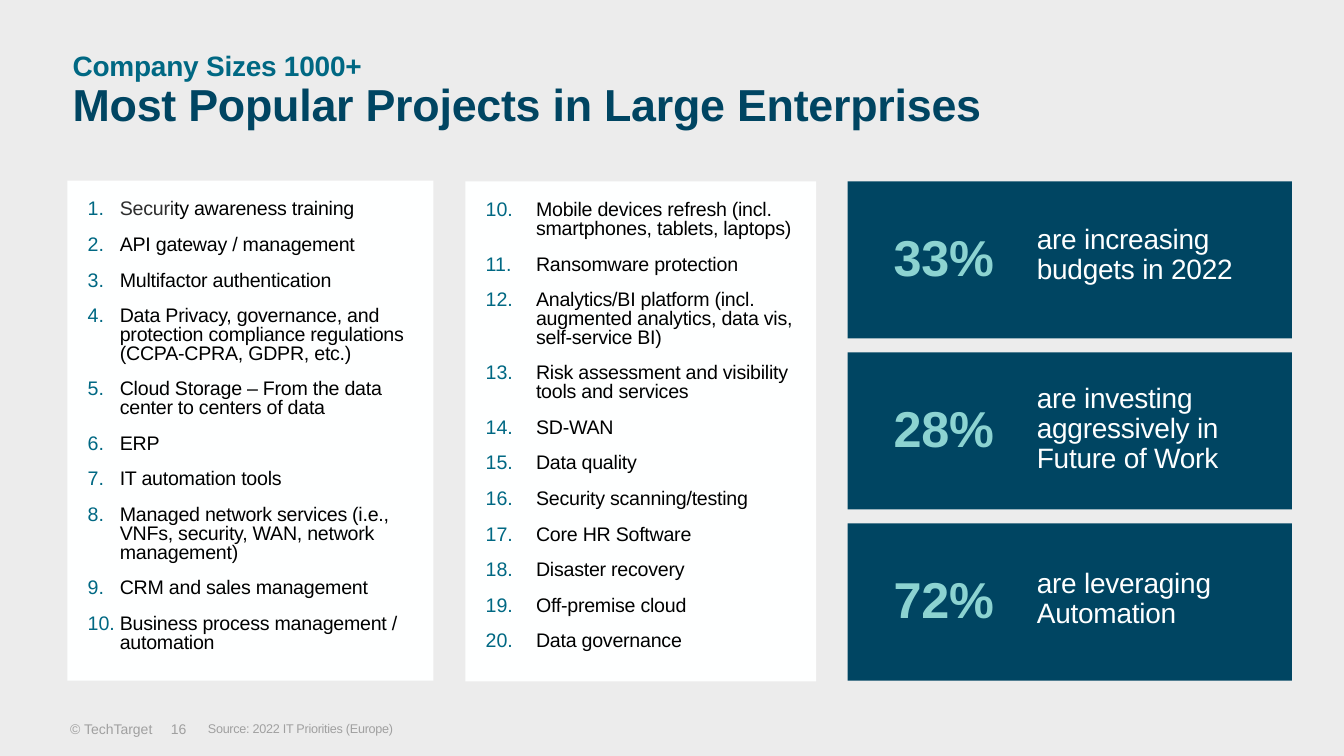
from dataclasses import dataclass

from lxml import etree
from pptx import Presentation
from pptx.dml.color import RGBColor
from pptx.enum import shapes, text
from pptx.oxml.ns import qn
from pptx.util import Cm, Pt

HUES = {
    "page": "ECECEC", "white": "FEFFFF", "navy": "004562", "teal": "006883",
    "mint": "8CD3D1", "grey": "A0A0A0", "black": "000000", "dark": "2E2E2E",
}
LEFT, MID, RIGHT = text.PP_ALIGN.LEFT, text.PP_ALIGN.CENTER, text.PP_ALIGN.RIGHT


@dataclass
class Box:
    left: float
    top: float
    width: float
    height: float


@dataclass
class Style:
    size: float
    hue: str
    bold: bool = False
    track: int = -20
    align: int = LEFT
    lines: float = 0.9
    after: float = 0


@dataclass
class Panel:
    box: Box
    start: int
    hang: float
    items: list[str]


@dataclass
class Stat:
    share: str
    label: str
    top: float
    height: float


PANELS = [
    Panel(Box(1.7, 4.55, 9.22, 12.6), 1, 0.81, [
        "Security awareness training",
        "API gateway / management",
        "Multifactor authentication",
        "Data Privacy, governance, and protection compliance regulations (CCPA-CPRA, GDPR, etc.)",
        "Cloud Storage – From the data center to centers of data",
        "ERP",
        "IT automation tools",
        "Managed network services (i.e., VNFs, security, WAN, network management)",
        "CRM and sales management",
        "Business process management / automation",
    ]),
    Panel(Box(11.73, 4.57, 8.84, 12.6), 10, 1.27, [
        "Mobile devices refresh (incl. smartphones, tablets, laptops)",
        "Ransomware protection",
        "Analytics/BI platform (incl. augmented analytics, data vis, self-service BI)",
        "Risk assessment and visibility tools and services",
        "SD-WAN",
        "Data quality",
        "Security scanning/testing",
        "Core HR Software",
        "Disaster recovery",
        "Off-premise cloud",
        "Data governance",
    ]),
]
STATS = [
    Stat("33%", "are increasing budgets in 2022", 5.54, 1.8),
    Stat("28%", "are investing aggressively in Future of Work", 9.55, 2.57),
    Stat("72%", "are leveraging Automation", 14.22, 1.8),
]
CARD = Box(21.36, 4.57, 11.2, 3.96)
PITCH = 4.31


def color(name: str) -> RGBColor:
    return RGBColor.from_string(HUES[name])


def place(shape, box: Box) -> None:
    shape.left, shape.top = Cm(box.left), Cm(box.top)
    shape.width, shape.height = Cm(box.width), Cm(box.height)


def paint(shape, hue: str) -> None:
    shape.fill.solid()
    shape.fill.fore_color.rgb = color(hue)
    shape.line.fill.background()


def frame(shape, side: float, edge: float, anchor=text.MSO_ANCHOR.TOP) -> None:
    area = shape.text_frame
    area.word_wrap = True
    area.auto_size = text.MSO_AUTO_SIZE.NONE
    area.vertical_anchor = anchor
    area.margin_left = area.margin_right = Cm(side)
    area.margin_top = area.margin_bottom = Cm(edge)


def format(para, style: Style) -> None:
    para.alignment = style.align
    para.line_spacing = style.lines
    para.space_before, para.space_after = Pt(0), Pt(style.after)
    for run in para.runs:
        run.font.name = "Arial"
        run.font.size = Pt(style.size)
        run.font.bold = style.bold
        run.font.color.rgb = color(style.hue)
        run.font._element.set("spc", str(style.track))


def label(slide, box: Box, words: str, style: Style, side: float = 0.25,
          anchor=text.MSO_ANCHOR.TOP) -> None:
    shape = slide.shapes.add_textbox(0, 0, 0, 0)
    place(shape, box)
    frame(shape, side, 0.13, anchor)
    para = shape.text_frame.paragraphs[0]
    para.text = words
    format(para, style)


def number(para, start: int, hang: float) -> None:
    props = para._p.get_or_add_pPr()
    props.set("marL", str(Cm(hang)))
    props.set("indent", str(-Cm(hang)))
    tint = etree.SubElement(props, qn("a:buClr"))
    etree.SubElement(tint, qn("a:srgbClr"), val=HUES["teal"])
    etree.SubElement(props, qn("a:buFont"), typeface="Arial")
    etree.SubElement(props, qn("a:buAutoNum"), type="arabicPeriod", startAt=str(start))


def fill_list(shape, panel: Panel) -> None:
    place(shape, panel.box)
    paint(shape, "white")
    frame(shape, 0.51, 0.51)
    shape.text_frame.text = "\n".join(panel.items)
    for para in shape.text_frame.paragraphs:
        number(para, panel.start, panel.hang)
        format(para, Style(14, "black", lines=0.8, after=12))


def main() -> None:
    deck = Presentation()
    deck.slide_width, deck.slide_height = Cm(33.87), Cm(19.05)
    slide = deck.slides.add_slide(deck.slide_layouts[3])
    back = slide.background.fill
    back.solid()
    back.fore_color.rgb = color("page")

    # Title
    title = slide.shapes.title
    place(title, Box(1.7, 1.35, 30.48, 1.93))
    frame(title, 0.13, 0.13, text.MSO_ANCHOR.MIDDLE)
    title.text_frame.text = "Company Sizes 1000+\nMost Popular Projects in Large Enterprises"
    heads = [Style(20, "teal", bold=True), Style(32, "navy", bold=True)]
    for para, style in zip(title.text_frame.paragraphs, heads):
        format(para, style)

    # Numbered lists
    for slot, panel in enumerate(PANELS, start=1):
        fill_list(slide.placeholders[slot], panel)

    # The first letters of the first item are lighter
    first = slide.placeholders[1].text_frame.paragraphs[0]
    first.text = "Securi"
    first.add_run().text = "ty awareness training"
    format(first, Style(14, "black", lines=0.8, after=12))
    first.runs[0].font.color.rgb = color("dark")

    # Figures on cards
    for row, stat in enumerate(STATS):
        top = CARD.top + row * PITCH
        card = slide.shapes.add_shape(shapes.MSO_SHAPE.RECTANGLE, 0, 0, 0, 0)
        place(card, Box(CARD.left, top, CARD.width, CARD.height))
        paint(card, "navy")
        card.shadow.inherit = False
        label(slide, Box(21.97, top + 1.15, 3.63, 1.68), stat.share,
              Style(36, "mint", bold=True, align=MID), anchor=text.MSO_ANCHOR.MIDDLE)
        label(slide, Box(25.88, stat.top, 5.77, stat.height), stat.label, Style(20, "white"))

    # Footer
    label(slide, Box(1.19, 18.03, 2.9, 0.69), "© TechTarget",
          Style(10, "grey", track=0, align=RIGHT, lines=1.0))
    label(slide, Box(4.06, 18.03, 1.47, 0.69), "16", Style(10, "grey", track=0, lines=1.0))
    label(slide, Box(5.11, 18.08, 27.08, 0.91), "Source: 2022 IT Priorities (Europe)",
          Style(9, "grey"), side=0.13)

    deck.save("out.pptx")


if __name__ == "__main__":
    main()
